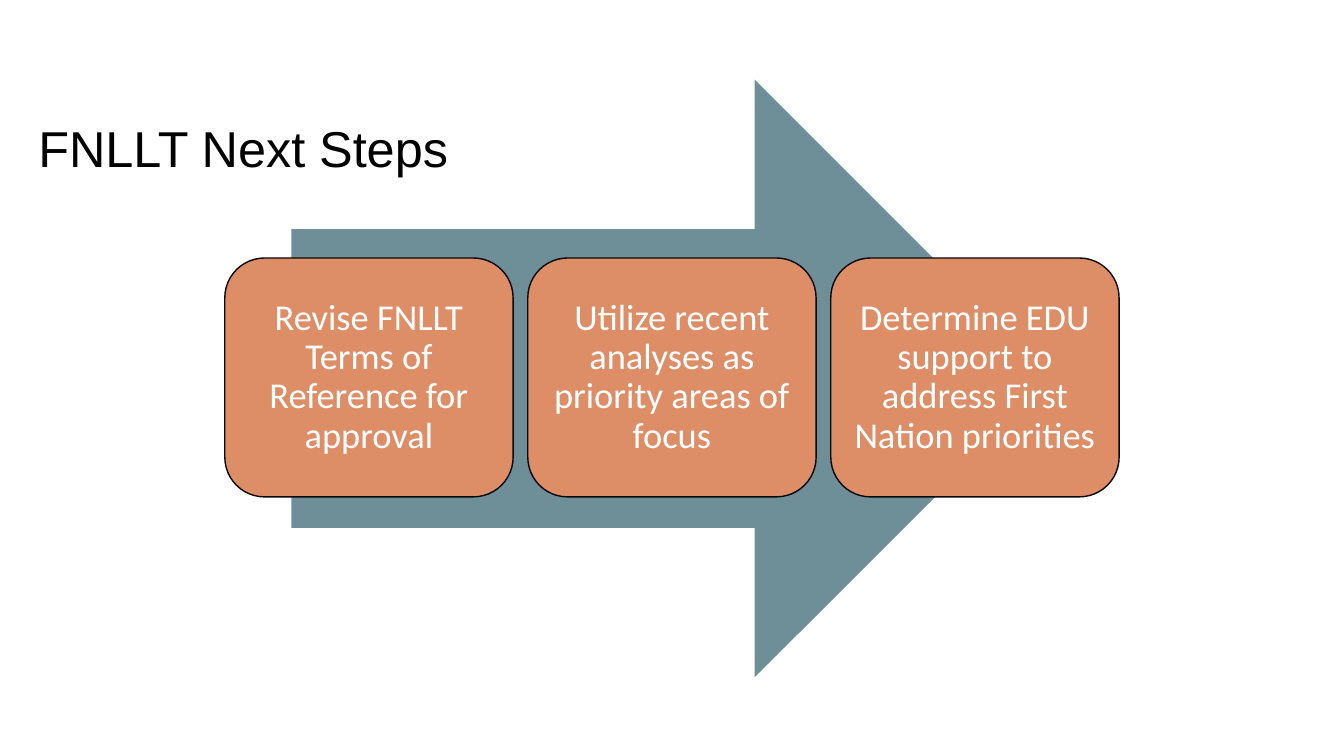
"""Build the FNLLT next steps slide: three step cards over a right arrow."""
from dataclasses import dataclass

from pptx import Presentation
from pptx.dml.color import RGBColor
from pptx.enum import shapes, text
from pptx.util import Inches, Pt


@dataclass(frozen=True)
class Theme:
    arrow: RGBColor = RGBColor.from_string("6E8E98")
    card: RGBColor = RGBColor.from_string("DE8E67")
    outline: RGBColor = RGBColor.from_string("09080B")
    title: RGBColor = RGBColor.from_string("000000")
    label: RGBColor = RGBColor.from_string("FFFFFF")
    title_font: str = "Arial"
    label_font: str = "Calibri"
    title_size: int = 36
    label_size: int = 26


def write(frame, words, font, size, color, align):
    frame.word_wrap = True
    para = frame.paragraphs[0]
    para.alignment = align
    para.line_spacing = 0.9
    para.space_before = Pt(0)
    span = para.add_run()
    span.text = words
    span.font.name = font
    span.font.size = Pt(size)
    span.font.color.rgb = color


def add_box(page, kind, left, top, width, height, fill):
    box = page.shapes.add_shape(kind, Inches(left), Inches(top), Inches(width), Inches(height))
    box.shadow.inherit = False
    box.fill.solid()
    box.fill.fore_color.rgb = fill
    return box


theme = Theme()
deck = Presentation()
deck.slide_width, deck.slide_height = Inches(13.33), Inches(7.5)
page = deck.slides.add_slide(deck.slide_layouts[5])

title = page.shapes.title
title.left, title.top = Inches(0.28), Inches(1.18)
title.width, title.height = Inches(8.67), Inches(0.85)
title.text_frame.vertical_anchor = text.MSO_ANCHOR.TOP
write(title.text_frame, "FNLLT Next Steps", theme.title_font, theme.title_size,
      theme.title, text.PP_ALIGN.LEFT)

arrow = add_box(page, shapes.MSO_SHAPE.RIGHT_ARROW, 2.89, 0.79, 7.56, 5.93, theme.arrow)
arrow.line.fill.background()

steps = [
    "Revise FNLLT Terms of Reference for approval",
    "Utilize recent analyses as priority areas of focus",
    "Determine EDU support to address First Nation priorities",
]
first_left, card_top = 2.23, 2.56
card_width, card_height, gap = 2.86, 2.37, 0.145

for column, step in enumerate(steps):
    left = first_left + column * (card_width + gap)
    card = add_box(page, shapes.MSO_SHAPE.ROUNDED_RECTANGLE, left, card_top,
                   card_width, card_height, theme.card)
    card.line.color.rgb = theme.outline
    card.line.width = Pt(1)
    frame = card.text_frame
    frame.margin_left = frame.margin_right = Inches(0.11)
    frame.margin_top = frame.margin_bottom = Inches(0.11)
    frame.vertical_anchor = text.MSO_ANCHOR.MIDDLE
    write(frame, step, theme.label_font, theme.label_size, theme.label, text.PP_ALIGN.CENTER)

deck.save("out.pptx")
